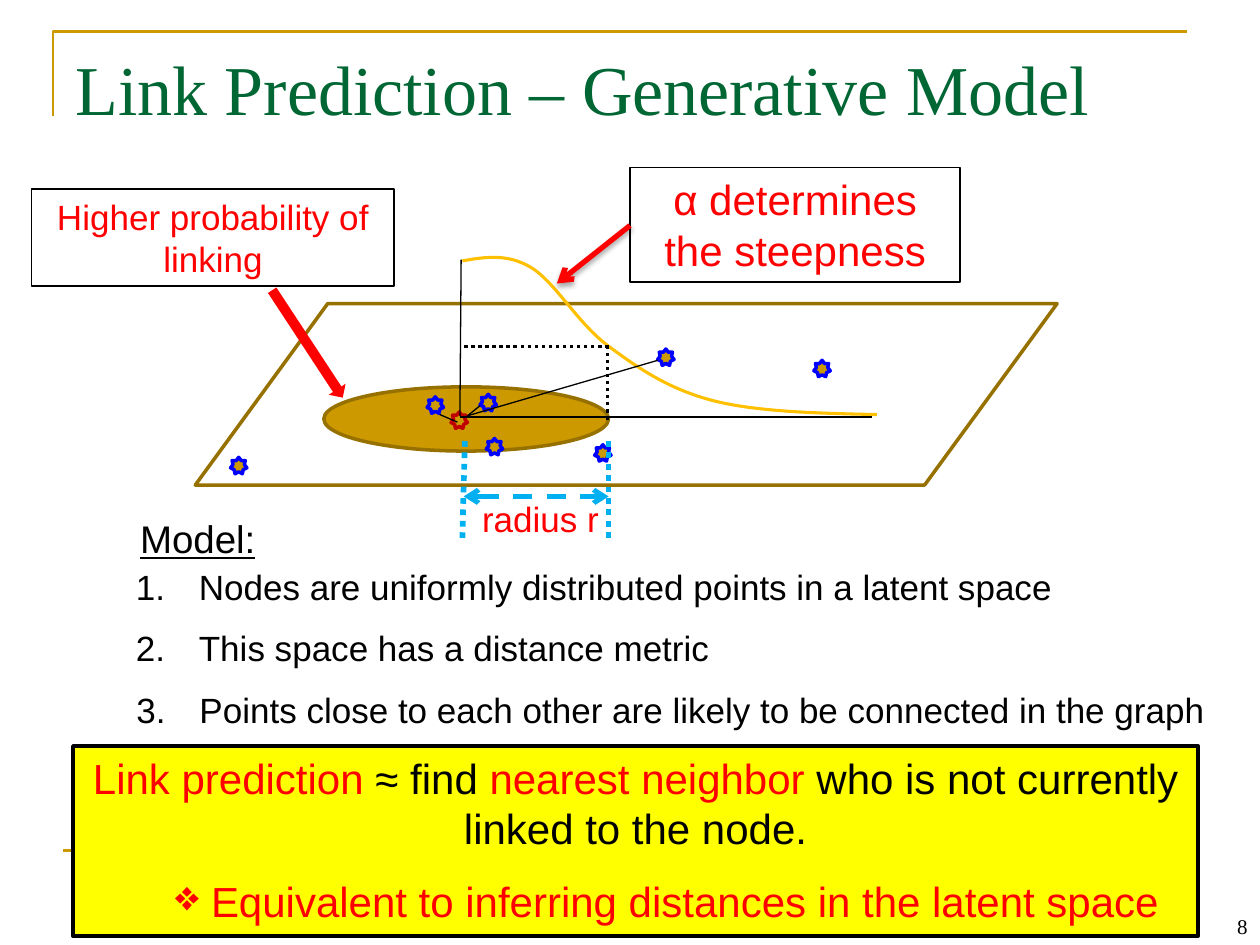
from lxml import etree
from pptx import Presentation
from pptx import util as u
from pptx.dml import color
from pptx.enum import dml, shapes, text
from pptx.oxml import ns

COLORS = {
    "gold": "CC9900", "brown": "977100", "amber": "FFC000", "green": "006633",
    "red": "FF0000", "dark red": "C00000", "blue": "0000FF", "sky": "00B0F0",
    "yellow": "FFFF00", "black": "000000", "white": "FFFFFF",
}
RGB = {name: color.RGBColor.from_string(value) for name, value in COLORS.items()}
KIND = shapes.MSO_SHAPE
DASH = dml.MSO_LINE
ALIGN = text.PP_ALIGN

presentation = Presentation()
presentation.slide_width, presentation.slide_height = u.Inches(10), u.Inches(7.5)
slide = presentation.slides.add_slide(presentation.slide_layouts[6])


def add_box(kind, box, fill=None, line=None, width=1):
    """Add a preset shape, or a plain text box when kind is None."""
    place = [u.Inches(length) for length in box]
    if kind is None:
        return slide.shapes.add_textbox(*place)
    shape = slide.shapes.add_shape(kind, *place)
    shape.shadow.inherit = False
    if fill:
        shape.fill.solid()
        shape.fill.fore_color.rgb = RGB[fill]
    else:
        shape.fill.background()
    if line:
        shape.line.color.rgb = RGB[line]
        shape.line.width = u.Pt(width)
    else:
        shape.line.fill.background()
    return shape


def write(shape, content, size=20, ink="red", font="Arial", align=ALIGN.CENTER,
          underline=None, anchor=text.MSO_ANCHOR.TOP, before=0, margin=0, indent=0,
          bullet=None):
    """Add a paragraph; content is a string or a list of (string, colour) runs."""
    frame = shape.text_frame
    frame.word_wrap = True
    frame.vertical_anchor = anchor
    paragraph = frame.paragraphs[0] if not frame.text else frame.add_paragraph()
    paragraph.alignment = align
    paragraph.space_before = u.Pt(before)
    for words, run_ink in [(content, ink)] if isinstance(content, str) else content:
        run = paragraph.add_run()
        run.text = words
        run.font.name, run.font.size = font, u.Pt(size)
        run.font.underline = underline
        run.font.color.rgb = RGB[run_ink]
    if bullet:
        properties = paragraph._p.get_or_add_pPr()
        properties.set("marL", str(u.Inches(margin)))
        properties.set("indent", str(u.Inches(indent)))
        tag, attribute = ("a:buAutoNum", "type") if bullet == "arabicPeriod" else ("a:buChar", "char")
        etree.SubElement(properties, ns.qn(tag)).set(attribute, bullet)


# Frame line around the title
builder = slide.shapes.build_freeform(u.Inches(0.42), u.Inches(0.92))
builder.add_line_segments([(u.Inches(0.42), u.Inches(0.25)), (u.Inches(9.42), u.Inches(0.25))], close=False)
title_frame = builder.convert_to_shape()

# Latent space plane and the neighbourhood of the node
plane = add_box(KIND.PARALLELOGRAM, (1.55, 2.41, 6.84, 1.44), "white", "brown", 2)
plane.adjustments[0] = 0.73
add_box(KIND.OVAL, (2.57, 3.07, 2.26, 0.51), "gold", "brown", 2)

# Nodes: the centre first, then the others
nodes = [(3.58, 3.27), (3.81, 3.13), (3.39, 3.15), (3.86, 3.48),
         (4.72, 3.53), (5.22, 2.77), (6.46, 2.86), (1.83, 3.63)]
for number, (left, top) in enumerate(nodes):
    add_box(KIND.STAR_7_POINT, (left, top, 0.13, 0.13), "gold", "blue" if number else "dark red", 2)

# Probability curve, sampled from cubic segments
curve_points = [(3.67, 2.07), (3.85, 2.04), (4.02, 2.01), (4.21, 2.12), (4.4, 2.23),
                (4.58, 2.56), (4.82, 2.74), (5.06, 2.92), (5.31, 3.09), (5.66, 3.18),
                (6.02, 3.27), (6.49, 3.28), (6.96, 3.29)]
steps = 16
samples = []
for start in range(0, len(curve_points) - 1, 3):
    for step in range(1, steps + 1):
        t = step / steps
        weights = ((1 - t) ** 3, 3 * t * (1 - t) ** 2, 3 * t * t * (1 - t), t ** 3)
        controls = zip(*curve_points[start:start + 4])
        samples.append([u.Inches(sum(w * c for w, c in zip(weights, axis))) for axis in controls])
builder = slide.shapes.build_freeform(*[u.Inches(length) for length in curve_points[0]])
builder.add_line_segments(samples, close=False)
curve = builder.convert_to_shape()

for outline, ink, width in [(title_frame, "gold", 1.5), (curve, "amber", 1.75)]:
    outline.shadow.inherit = False
    outline.fill.background()
    outline.line.color.rgb = RGB[ink]
    outline.line.width = u.Pt(width)

# Callouts
block_arrow = add_box(KIND.RIGHT_ARROW, (1.93, 2.65, 1.02, 0.16), "red")
block_arrow.rotation = 56.7
write(add_box(KIND.RECTANGLE, (0.25, 1.5, 2.88, 0.77), "white", "black"), "Higher probability of linking")
write(add_box(KIND.RECTANGLE, (5, 1.33, 2.62, 0.91), None, "black"), "α determines the steepness", size=24)
write(add_box(None, (3.58, 3.9, 1.42, 0.44)), "radius r")

# Lines: start, end, colour, width, dash, arrowheads
lines = [
    ((0.5, 6.75), (9.5, 6.75), "gold", 1.5, None, ()),  # footer
    ((4.82, 3.33), (4.82, 2.74), "black", 2, DASH.ROUND_DOT, ()),  # probability at r
    ((4.83, 2.75), (3.67, 2.75), "black", 2, DASH.ROUND_DOT, ()),
    ((3.65, 3.31), (6.92, 3.31), "black", 0.75, None, ()),  # axes
    ((3.65, 3.3), (3.66, 2.06), "black", 0.75, None, ()),
    ((3.71, 3.3), (3.81, 3.22), "black", 0.75, None, ()),  # links
    ((3.49, 3.29), (3.63, 3.35), "black", 0.75, None, ()),
    ((3.71, 3.3), (5.22, 2.86), "black", 0.75, None, ()),
    ((3.68, 3.94), (4.83, 3.94), "sky", 2.75, DASH.DASH, ("headEnd", "tailEnd")),  # radius
    ((4.83, 4.27), (4.83, 3.46), "sky", 3.25, DASH.ROUND_DOT, ()),
    ((3.67, 4.27), (3.69, 3.47), "sky", 3.25, DASH.ROUND_DOT, ()),
    ((5, 1.79), (4.42, 2.25), "red", 3, None, ("tailEnd",)),  # steepness pointer
]
for start, end, ink, width, dash, heads in lines:
    connector = slide.shapes.add_connector(
        shapes.MSO_CONNECTOR.STRAIGHT, *[u.Inches(length) for length in start + end])
    connector.line.color.rgb = RGB[ink]
    connector.line.width = u.Pt(width)
    if dash:
        connector.line.dash_style = dash
    for head in heads:
        etree.SubElement(connector.line._get_or_add_ln(), ns.qn(f"a:{head}")).set("type", "arrow")
    effects = etree.SubElement(connector._element.spPr, ns.qn("a:effectLst"))

# Soft shadow under the steepness pointer, the last line drawn
shadow = etree.SubElement(effects, ns.qn("a:outerShdw"), blurRad=str(u.Pt(3.1)),
                          dist=str(u.Pt(1.8)), dir="5400000", rotWithShape="0")
shadow_color = etree.SubElement(shadow, ns.qn("a:srgbClr"), val=COLORS["black"])
etree.SubElement(shadow_color, ns.qn("a:alpha"), val="35000")

# Title and slide number
write(add_box(None, (0.5, 0.31, 9.25, 0.94)), "Link Prediction – Generative Model",
      size=40, ink="green", font="Times New Roman", align=ALIGN.LEFT)
write(add_box(None, (9.33, 7, 0.67, 0.5)), "8", size=12, ink="black",
      font="Times New Roman", align=ALIGN.RIGHT, anchor=text.MSO_ANCHOR.BOTTOM)

# Model assumptions
write(add_box(None, (0.67, 4.04, 1.8, 0.47)), "Model:", size=22, ink="black", underline=True)
assumptions = add_box(None, (0.98, 4.44, 8.69, 1.45))
for words, align, before in [
    ("Nodes are uniformly distributed points in a latent space", ALIGN.LEFT, 0),
    ("This space has a distance metric", ALIGN.LEFT, 11),
    ("Points close to each other are likely to be connected in the graph", ALIGN.CENTER, 11),
]:
    write(assumptions, words, ink="black", align=align, before=before,
          margin=0.5, indent=-0.5, bullet="arabicPeriod")

# Conclusion
conclusion = add_box(KIND.RECTANGLE, (0.58, 5.92, 8.93, 1.51), "yellow", "black", 2)
write(conclusion, [("Link prediction ", "red"), ("≈ find ", "black"), ("nearest neighbor ", "red"),
                   ("who is not currently linked to the node.", "black")], size=24)
write(conclusion, " Equivalent to inferring distances in the latent space", size=24,
      before=13, margin=0.5, bullet="❖")

presentation.save("out.pptx")
